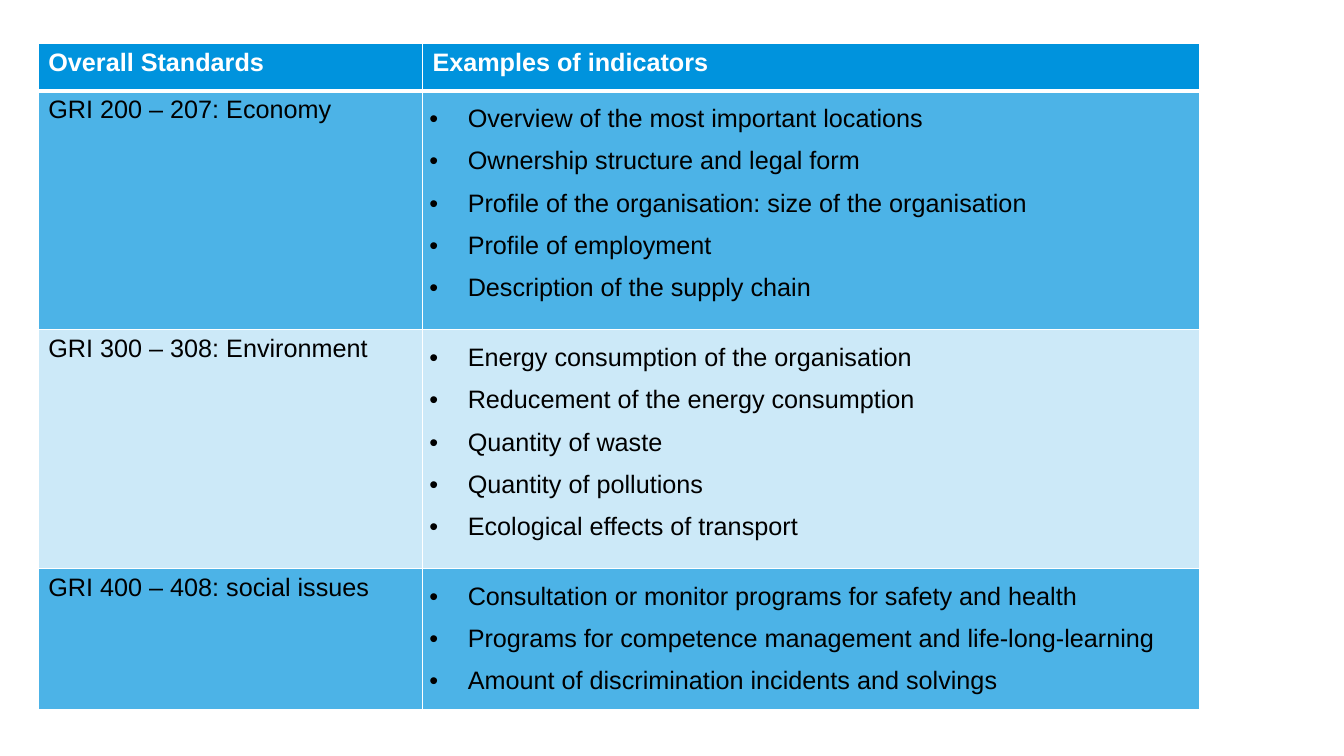
import pptx
import pptx.dml.color
import pptx.oxml
import pptx.oxml.ns
import pptx.util
from lxml import etree

Inches, Pt = pptx.util.Inches, pptx.util.Pt
qn = pptx.oxml.ns.qn

BLUE, WHITE, BLACK = "0093DD", "FFFFFF", "000000"
COLUMN_WIDTHS = (3.81, 7.71)
ROW_HEIGHTS = (0.47, 2.37, 2.37, 1.4)
HEADINGS = ("Overall Standards", "Examples of indicators")
STANDARDS = (
    ("GRI 200 – 207: Economy", (
        "Overview of the most important locations",
        "Ownership structure and legal form",
        "Profile of the organisation: size of the organisation",
        "Profile of employment",
        "Description of the supply chain")),
    ("GRI 300 – 308: Environment", (
        "Energy consumption of the organisation",
        "Reducement of the energy consumption",
        "Quantity of waste",
        "Quantity of pollutions",
        "Ecological effects of transport")),
    ("GRI 400 – 408: social issues", (
        "Consultation or monitor programs for safety and health",
        "Programs for competence management and life-long-learning",
        "Amount of discrimination incidents and solvings")),
)


def color(hex_value):
    return pptx.dml.color.RGBColor.from_string(hex_value)


def add_borders(cell, top=1, bottom=1):
    """Draw white borders; must run before the cell is filled."""
    properties = cell._tc.get_or_add_tcPr()
    for side, points in (("L", 1), ("R", 1), ("T", top), ("B", bottom)):
        line = etree.SubElement(properties, qn(f"a:ln{side}"), w=str(Pt(points)))
        fill = etree.SubElement(line, qn("a:solidFill"))
        etree.SubElement(fill, qn("a:srgbClr"), val=WHITE)


def fill_cell(cell, opacity):
    cell.fill.solid()
    cell.fill.fore_color.rgb = color(BLUE)
    if opacity < 100:
        fill_color = cell._tc.tcPr.find(qn("a:solidFill")).find(qn("a:srgbClr"))
        etree.SubElement(fill_color, qn("a:alpha"), val=str(opacity * 1000))


def write_lines(cell, lines, text_color=BLACK, bold=False, bulleted=False):
    cell.text_frame.text = "\n".join(lines)
    for paragraph in cell.text_frame.paragraphs:
        if bulleted:
            paragraph.line_spacing = 1.5
            properties = paragraph._p.get_or_add_pPr()
            properties.set("marL", str(Inches(0.38)))
            properties.set("indent", str(-Inches(0.38)))
            etree.SubElement(properties, qn("a:buFont"), typeface="Arial")
            etree.SubElement(properties, qn("a:buChar"), char="•")
        paragraph.font.name = "Arial"
        paragraph.font.size = Pt(18)
        paragraph.font.bold = bold
        paragraph.font.color.rgb = color(text_color)


def add_standards_table(slide):
    frame = slide.shapes.add_table(
        len(ROW_HEIGHTS), len(COLUMN_WIDTHS), Inches(0.38), Inches(0.43),
        Inches(sum(COLUMN_WIDTHS)), Inches(sum(ROW_HEIGHTS)))
    table = frame.table
    table.horz_banding = False
    for column, width in zip(table.columns, COLUMN_WIDTHS):
        column.width = Inches(width)
    for row, height in zip(table.rows, ROW_HEIGHTS):
        row.height = Inches(height)
    return table


def add_header(table):
    for cell, heading in zip(table.rows[0].cells, HEADINGS):
        add_borders(cell, bottom=3)
        fill_cell(cell, 100)
        write_lines(cell, [heading], WHITE, bold=True)


def add_standard(table, row, standard, indicators):
    standard_cell, indicator_cell = table.rows[row].cells
    for cell in (standard_cell, indicator_cell):
        add_borders(cell, top=3 if row == 1 else 1)
        fill_cell(cell, 70 if row % 2 else 20)
    write_lines(standard_cell, [standard])
    write_lines(indicator_cell, indicators, bulleted=True)
    indicator_cell.margin_left = indicator_cell.margin_right = Inches(0.07)
    indicator_cell.margin_top = indicator_cell.margin_bottom = 0


def main():
    deck = pptx.Presentation()
    deck.slide_width, deck.slide_height = Inches(13.33), Inches(7.5)
    slide = deck.slides.add_slide(deck.slide_layouts[6])
    table = add_standards_table(slide)
    add_header(table)
    for row, (standard, indicators) in enumerate(STANDARDS, start=1):
        add_standard(table, row, standard, indicators)
    deck.save("out.pptx")


if __name__ == "__main__":
    main()
